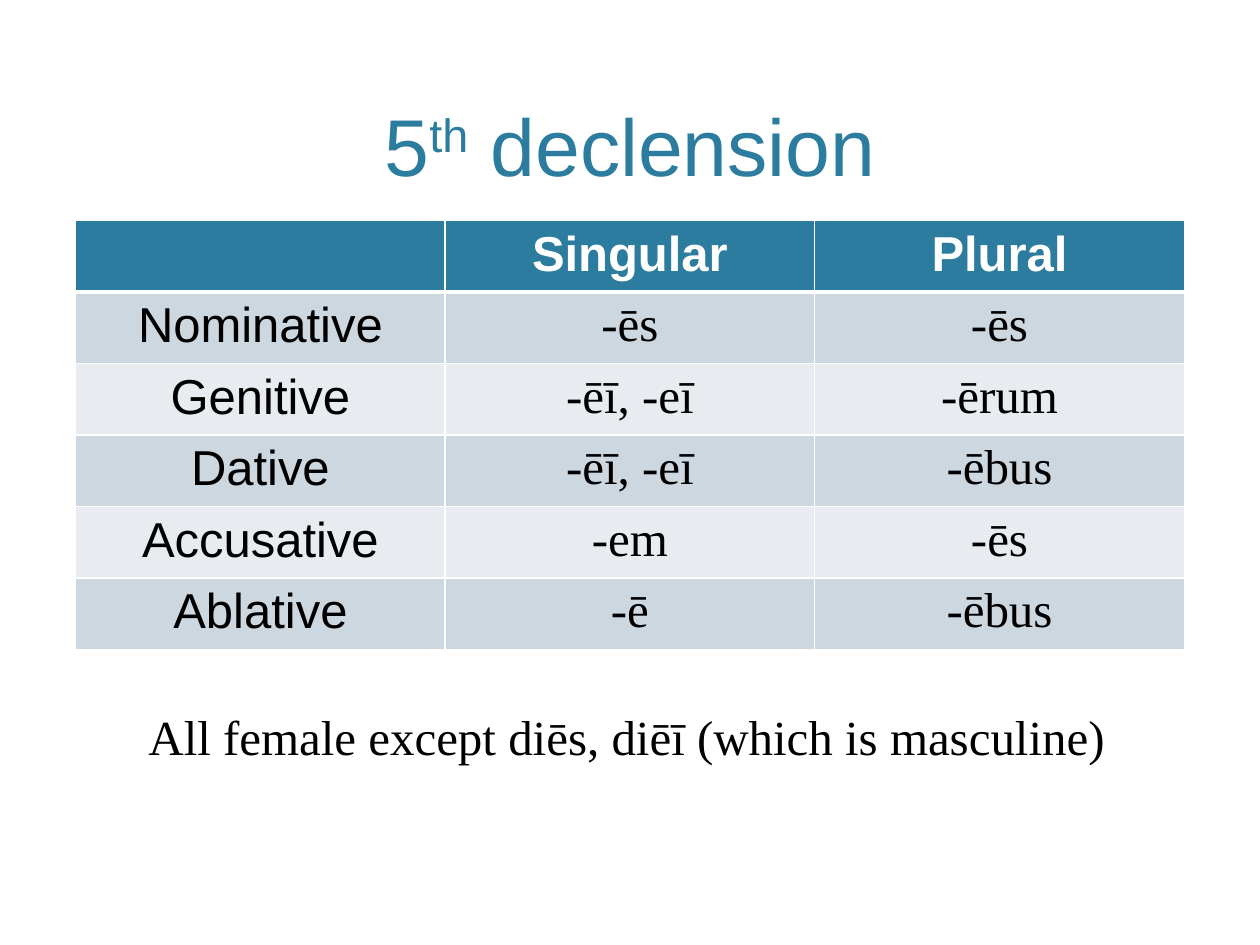
from dataclasses import dataclass

from lxml.etree import SubElement
from pptx import Presentation
from pptx.dml.color import RGBColor
from pptx.enum.text import MSO_ANCHOR, PP_ALIGN
from pptx.oxml.ns import qn
from pptx.util import Inches, Pt


@dataclass(frozen=True)
class Theme:
    accent: str = "2C7C9F"
    white: str = "FFFFFF"
    black: str = "000000"
    bands: tuple[str, str] = ("CDD7DF", "E8ECF0")
    sans: str = "Arial"
    serif: str = "Times New Roman"
    title: int = 46
    body: int = 28


@dataclass(frozen=True)
class Box:
    left: float
    top: float
    width: float
    height: float

    def emu(self):
        return [Inches(v) for v in (self.left, self.top, self.width, self.height)]


@dataclass(frozen=True)
class Declension:
    case: str
    singular: str
    plural: str


THEME = Theme()
WIDTH, HEIGHT = 10, 7.5
MARGIN = 0.06 * WIDTH
CONTENT = WIDTH - 2 * MARGIN
ROW_HEIGHT = 0.53
HEADER = Declension("", "Singular", "Plural")
CASES = [
    Declension("Nominative", "-ēs", "-ēs"),
    Declension("Genitive", "-ēī, -eī", "-ērum"),
    Declension("Dative", "-ēī, -eī", "-ēbus"),
    Declension("Accusative", "-em", "-ēs"),
    Declension("Ablative", "-ē", "-ēbus"),
]


def style(p, font: str, size: int, color: str, bold: bool = False,
          align=PP_ALIGN.CENTER) -> None:
    p.alignment = align
    p.font.name, p.font.size, p.font.bold = font, Pt(size), bold
    p.font.color.rgb = RGBColor.from_string(color)


def add_text(s, box: Box, anchor):
    tf = s.shapes.add_textbox(*box.emu()).text_frame
    tf.word_wrap = True
    tf.vertical_anchor = anchor
    return tf.paragraphs[0]


def set_borders(cell, bottom: int) -> None:
    tcPr = cell._tc.get_or_add_tcPr()
    widths = {"lnL": 1, "lnR": 1, "lnT": 1, "lnB": bottom}
    for i, (side, width) in enumerate(widths.items()):
        ln = tcPr.makeelement(qn(f"a:{side}"), {"w": str(Pt(width))})
        fill = SubElement(ln, qn("a:solidFill"))
        SubElement(fill, qn("a:srgbClr"), val=THEME.white)
        tcPr.insert(i, ln)


def fill_cell(cell, text: str, row: int, col: int) -> None:
    head = row == 0
    color = THEME.accent if head else THEME.bands[(row - 1) % 2]
    cell.fill.solid()
    cell.fill.fore_color.rgb = RGBColor.from_string(color)
    set_borders(cell, 3 if head else 1)
    if text:
        cell.text = text
        font = THEME.sans if head or col == 0 else THEME.serif
        style(cell.text_frame.paragraphs[0], font, THEME.body,
              THEME.white if head else THEME.black, bold=head)


def add_declensions(s, top: float, rows: list[Declension]) -> None:
    box = Box(MARGIN, top, CONTENT, ROW_HEIGHT * len(rows))
    table = s.shapes.add_table(len(rows), 3, *box.emu()).table
    for i, d in enumerate(rows):
        for j, text in enumerate((d.case, d.singular, d.plural)):
            fill_cell(table.cell(i, j), text, i, j)


def add_title(s) -> None:
    p = add_text(s, Box(MARGIN, 0.12, CONTENT, 1.46), MSO_ANCHOR.BOTTOM)
    style(p, THEME.sans, THEME.title, THEME.accent)
    for text, raised in (("5", False), ("th", True), (" declension", False)):
        r = p.add_run()
        r.text = text
        if raised:
            r.font._element.set("baseline", "30000")


def add_note(s) -> None:
    p = add_text(s, Box(1.08, 5.56, 8.06, 0.57), MSO_ANCHOR.TOP)
    p.text = "All female except diēs, diēī (which is masculine)"
    style(p, THEME.serif, THEME.body, THEME.black, align=PP_ALIGN.LEFT)


def main() -> None:
    prs = Presentation()
    prs.slide_width, prs.slide_height = Inches(WIDTH), Inches(HEIGHT)
    s = prs.slides.add_slide(prs.slide_layouts[6])
    add_title(s)
    add_declensions(s, 1.75, [HEADER, *CASES])
    add_note(s)
    prs.save("out.pptx")


if __name__ == "__main__":
    main()
